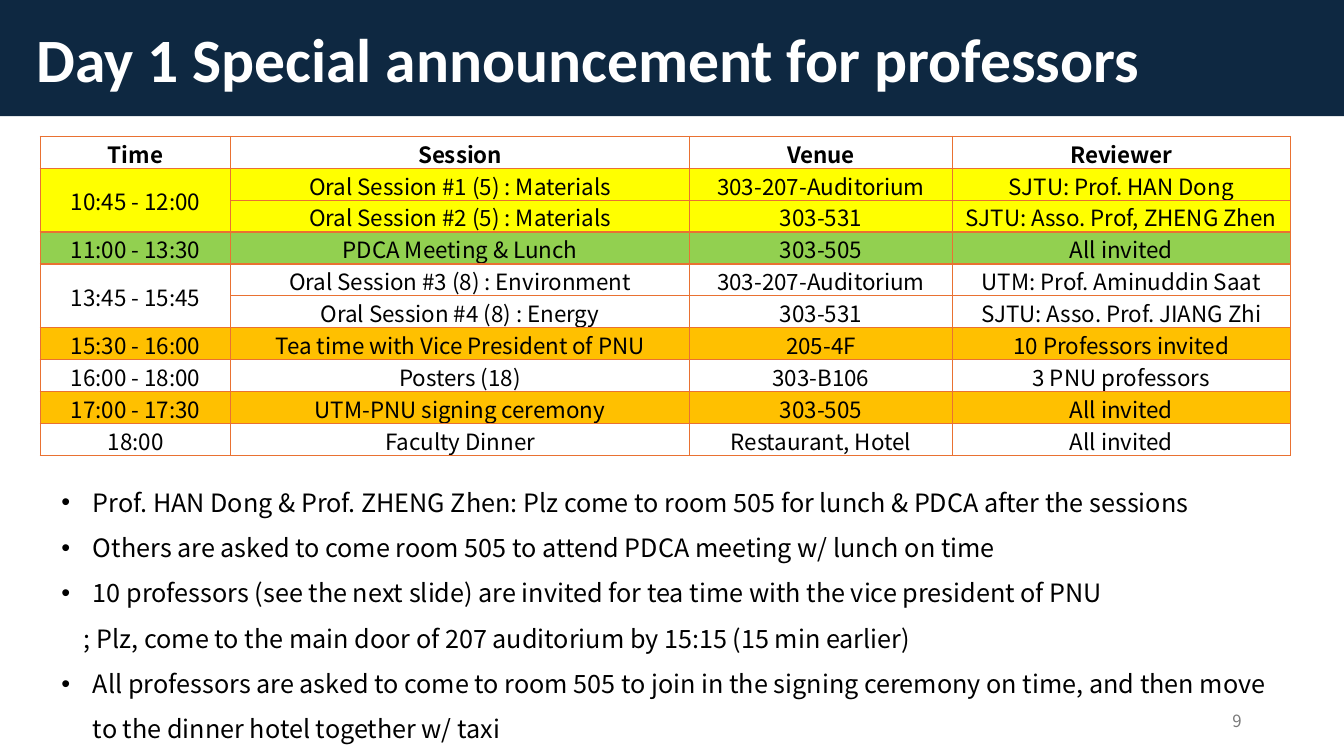
from dataclasses import dataclass

from lxml import etree
from pptx import Presentation
from pptx.dml.color import RGBColor
from pptx.enum.text import MSO_ANCHOR, MSO_AUTO_SIZE, PP_ALIGN
from pptx.oxml.ns import qn
from pptx.slide import Slide
from pptx.table import _Cell
from pptx.text.text import _Paragraph
from pptx.util import Pt

MIDDLE, TOP = MSO_ANCHOR.MIDDLE, MSO_ANCHOR.TOP
LEFT, CENTER, RIGHT = PP_ALIGN.LEFT, PP_ALIGN.CENTER, PP_ALIGN.RIGHT
NO_AUTOFIT, GROW = MSO_AUTO_SIZE.NONE, MSO_AUTO_SIZE.SHAPE_TO_FIT_TEXT
TITLE_AND_CONTENT = 1


@dataclass(frozen=True)
class Theme:
    title_font: str = "Calibri"
    body_font: str = "Noto Sans CJK KR"
    navy: str = "0E2841"
    white: str = "FFFFFF"
    black: str = "000000"
    gray: str = "797979"
    border: str = "E97132"
    yellow: str = "FFFF00"
    green: str = "92D050"
    amber: str = "FFC000"
    title_size: float = 44
    list_size: float = 18
    table_size: float = 16
    number_size: float = 12


THEME = Theme()


@dataclass(frozen=True)
class Event:
    time: str  # empty: shares the time slot of the event above
    session: str
    venue: str
    reviewer: str
    fill: str = ""
    bold: bool = False


@dataclass(frozen=True)
class Notice:
    text: str
    bulleted: bool = True


EVENTS = [
    Event("Time", "Session", "Venue", "Reviewer", bold=True),
    Event("10:45 - 12:00", "Oral Session #1 (5) : Materials", "303-207-Auditorium",
          "SJTU: Prof. HAN Dong", THEME.yellow),
    Event("", "Oral Session #2 (5) : Materials", "303-531",
          "SJTU: Asso. Prof, ZHENG Zhen", THEME.yellow),
    Event("11:00 - 13:30", "PDCA Meeting & Lunch", "303-505", "All invited", THEME.green),
    Event("13:45 - 15:45", "Oral Session #3 (8) : Environment", "303-207-Auditorium",
          "UTM: Prof. Aminuddin Saat"),
    Event("", "Oral Session #4 (8) : Energy", "303-531", "SJTU: Asso. Prof. JIANG Zhi"),
    Event("15:30 - 16:00", "Tea time with Vice President of PNU", "205-4F",
          "10 Professors invited", THEME.amber),
    Event("16:00 - 18:00", "Posters (18)", "303-B106", "3 PNU professors"),
    Event("17:00 - 17:30", "UTM-PNU signing ceremony", "303-505", "All invited", THEME.amber),
    Event("18:00", "Faculty Dinner", "Restaurant, Hotel", "All invited"),
]
COLUMN_WIDTHS = [136.1, 327.6, 187.9, 241.2]
ROW_HEIGHT = 22.8

NOTICES = [
    Notice("Prof. HAN Dong & Prof. ZHENG Zhen: Plz come to room 505 for lunch & PDCA "
           "after the sessions"),
    Notice("Others are asked to come room 505 to attend PDCA meeting w/ lunch on time"),
    Notice("10 professors (see the next slide) are invited for tea time with the vice "
           "president of PNU"),
    Notice("; Plz, come to the main door of 207 auditorium by 15:15 (15 min earlier)",
           bulleted=False),
    Notice("All professors are asked to come to room 505 to join in the signing ceremony "
           "on time, and then move to the dinner hotel together w/ taxi"),
]
BULLET_INDENT = 22.5
PLAIN_INDENT = 16


def place(shape, left: float, top: float, width: float, height: float) -> None:
    shape.left, shape.top = Pt(left), Pt(top)
    shape.width, shape.height = Pt(width), Pt(height)


def add_text(paragraph: _Paragraph, text: str, size: float, color: str = THEME.black,
             font: str = THEME.body_font, bold: bool = False) -> None:
    run = paragraph.add_run()
    run.text = text
    run.font.name, run.font.size, run.font.bold = font, Pt(size), bold
    run.font.color.rgb = RGBColor.from_string(color)


# Title band
def add_title(slide: Slide) -> None:
    title = slide.shapes.title
    place(title, 0, 0, 960, 83)
    title.fill.solid()
    title.fill.fore_color.rgb = RGBColor.from_string(THEME.navy)
    frame = title.text_frame
    frame.word_wrap, frame.auto_size = True, NO_AUTOFIT
    frame.vertical_anchor, frame.margin_left = MIDDLE, Pt(26)
    paragraph = frame.paragraphs[0]
    paragraph.alignment = LEFT
    add_text(paragraph, "Day 1 Special announcement for professors", THEME.title_size,
             THEME.white, THEME.title_font, bold=True)


# Page number
def add_page_number(slide: Slide) -> None:
    box = slide.shapes.add_textbox(Pt(678), Pt(500.4), Pt(216), Pt(28.8))
    frame = box.text_frame
    frame.word_wrap, frame.vertical_anchor = True, MIDDLE
    paragraph = frame.paragraphs[0]
    paragraph.alignment = RIGHT
    add_text(paragraph, "9", THEME.number_size, THEME.gray)


# Schedule table
def format_cell(cell: _Cell, fill: str) -> None:
    properties = cell._tc.get_or_add_tcPr()
    for side in ("a:lnL", "a:lnR", "a:lnT", "a:lnB"):
        line = etree.SubElement(properties, qn(side), w=str(Pt(1)))
        solid = etree.SubElement(line, qn("a:solidFill"))
        etree.SubElement(solid, qn("a:srgbClr"), val=THEME.border)
    if fill:
        cell.fill.solid()
        cell.fill.fore_color.rgb = RGBColor.from_string(fill)
    else:
        cell.fill.background()
    cell.vertical_anchor = MIDDLE
    cell.margin_left = cell.margin_right = cell.margin_top = Pt(0.7)
    cell.margin_bottom = Pt(0)


def add_schedule(slide: Slide) -> None:
    frame = slide.shapes.add_table(len(EVENTS), len(COLUMN_WIDTHS), Pt(28.8), Pt(97.4),
                                   Pt(sum(COLUMN_WIDTHS)), Pt(ROW_HEIGHT * len(EVENTS)))
    table = frame.table
    table.first_row = table.horz_banding = False
    for column, width in zip(table.columns, COLUMN_WIDTHS):
        column.width = Pt(width)
    for row_index, event in enumerate(EVENTS):
        table.rows[row_index].height = Pt(ROW_HEIGHT)
        texts = (event.time, event.session, event.venue, event.reviewer)
        for column_index, text in enumerate(texts):
            cell = table.cell(row_index, column_index)
            format_cell(cell, event.fill)
            paragraph = cell.text_frame.paragraphs[0]
            paragraph.alignment = CENTER
            if text:
                add_text(paragraph, text, THEME.table_size, bold=event.bold)
        if not event.time:
            table.cell(row_index - 1, 0).merge(table.cell(row_index, 0))


# Bulleted notices
def add_notices(slide: Slide) -> None:
    body = slide.placeholders[1]
    place(body, 36.7, 333.4, 892.8, 199.4)
    frame = body.text_frame
    frame.word_wrap, frame.auto_size, frame.vertical_anchor = True, GROW, TOP
    for index, notice in enumerate(NOTICES):
        paragraph = frame.add_paragraph() if index else frame.paragraphs[0]
        paragraph.alignment, paragraph.line_spacing = LEFT, 1.5
        paragraph.space_before = paragraph.space_after = Pt(0)
        properties = paragraph._p.get_or_add_pPr()
        if notice.bulleted:
            properties.set("marL", str(Pt(BULLET_INDENT)))
            properties.set("indent", str(Pt(-BULLET_INDENT)))
            etree.SubElement(properties, qn("a:buFont"), typeface="Arial")
            etree.SubElement(properties, qn("a:buChar"), char="•")
        else:
            properties.set("marL", str(Pt(PLAIN_INDENT)))
            properties.set("indent", "0")
            etree.SubElement(properties, qn("a:buNone"))
        add_text(paragraph, notice.text, THEME.list_size)


def main() -> None:
    presentation = Presentation()
    presentation.slide_width, presentation.slide_height = Pt(960), Pt(540)
    slide = presentation.slides.add_slide(presentation.slide_layouts[TITLE_AND_CONTENT])
    add_title(slide)
    add_page_number(slide)
    add_schedule(slide)
    add_notices(slide)
    presentation.save("out.pptx")


if __name__ == "__main__":
    main()
